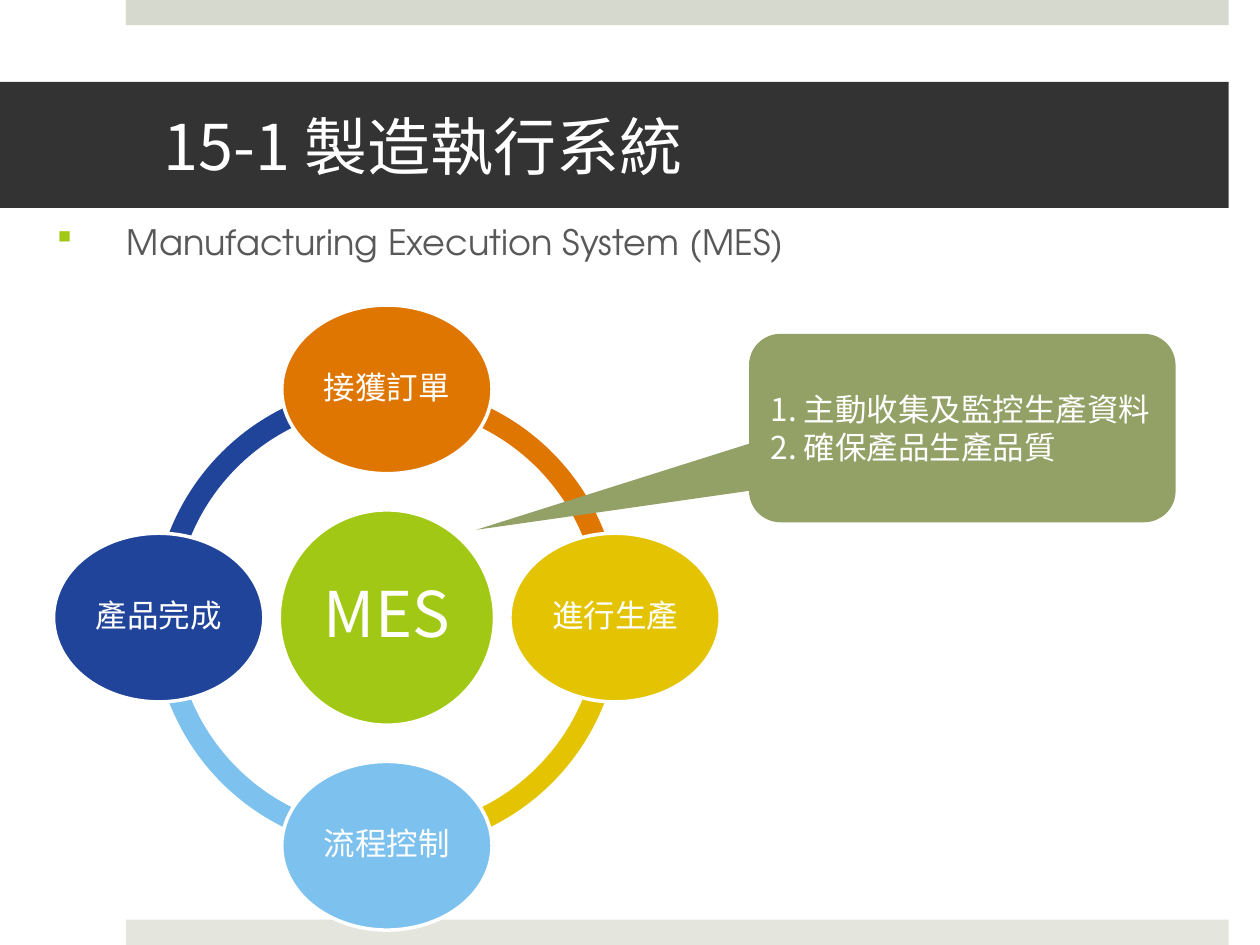
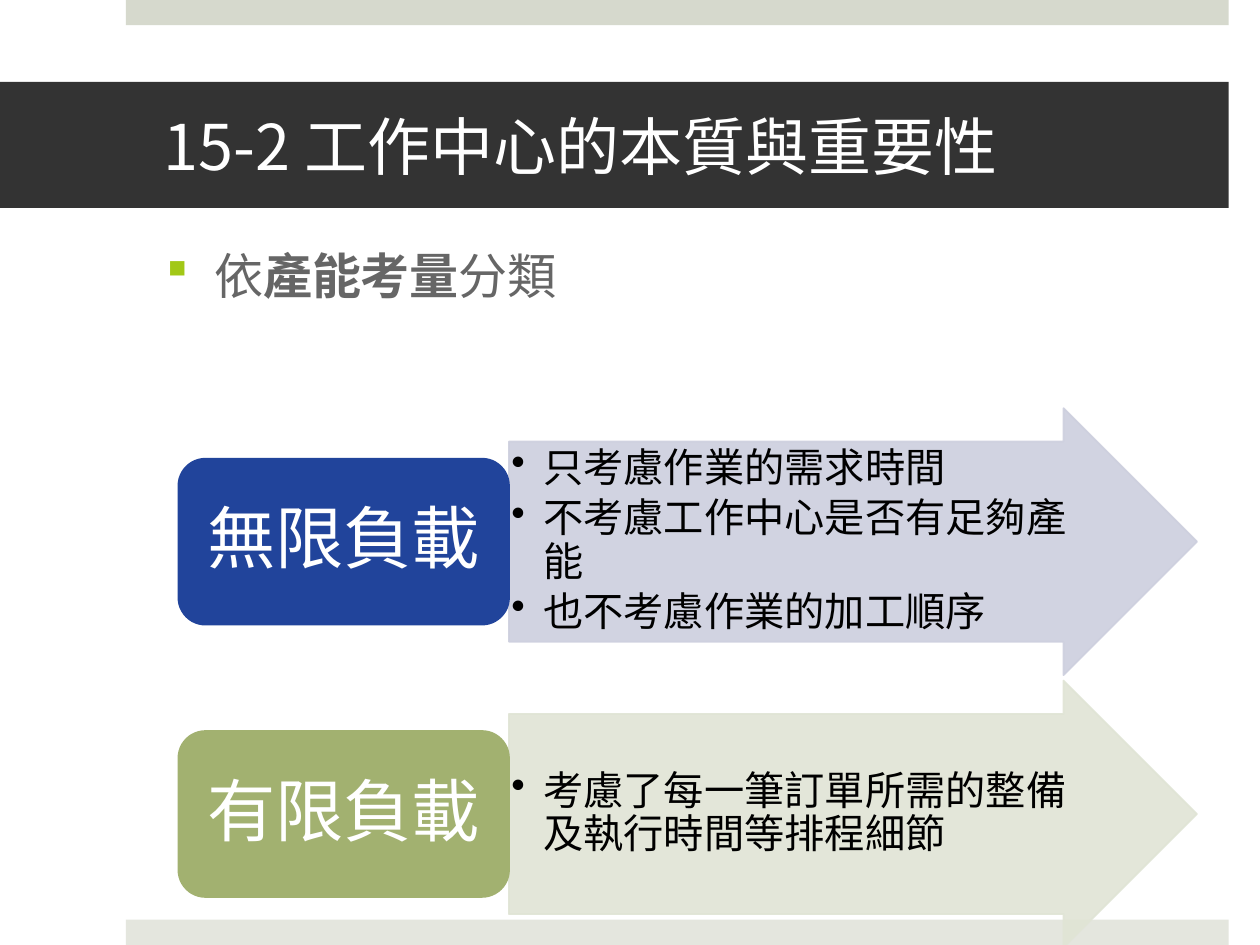
from dataclasses import dataclass
from math import cos, radians, sin

from lxml.etree import SubElement
from pptx import Presentation
from pptx.dml.color import RGBColor
from pptx.enum.shapes import MSO_SHAPE as Shape
from pptx.enum.text import MSO_ANCHOR as Anchor, PP_ALIGN as Align
from pptx.oxml.ns import qn
from pptx.shapes.autoshape import Shape as AutoShape
from pptx.slide import Slide
from pptx.text.text import _Paragraph as Paragraph
from pptx.util import Cm, Pt

WHITE = RGBColor(0xFF, 0xFF, 0xFF)
BLACK = RGBColor(0x00, 0x00, 0x00)
CHARCOAL = RGBColor(0x33, 0x33, 0x33)
DARK_GRAY = RGBColor(0x59, 0x59, 0x59)
GRAY = RGBColor(0x66, 0x66, 0x66)
TOP_BAND = RGBColor(0xD6, 0xD9, 0xCD)
BOTTOM_BAND = RGBColor(0xE4, 0xE6, 0xDE)
LIME = RGBColor(0xA2, 0xC8, 0x16)
ORANGE = RGBColor(0xE0, 0x76, 0x02)
YELLOW = RGBColor(0xE4, 0xC4, 0x02)
SKY = RGBColor(0x7D, 0xC1, 0xEF)
NAVY = RGBColor(0x21, 0x44, 0x9B)
OLIVE = RGBColor(0x93, 0xA1, 0x66)
MOSS = RGBColor(0xA2, 0xB1, 0x70)
PALE_NAVY = RGBColor(0xCD, 0xCF, 0xDE)
PALE_MOSS = RGBColor(0xE0, 0xE4, 0xD5)

CJK_FONT = "Noto Sans CJK SC"
LATIN_FONT = "TeX Gyre Adventor"


@dataclass(frozen=True)
class Area:
    """A rectangle in centimetres."""
    left: float
    top: float
    width: float
    height: float

    def lengths(self) -> tuple[Cm, Cm, Cm, Cm]:
        return Cm(self.left), Cm(self.top), Cm(self.width), Cm(self.height)


@dataclass(frozen=True)
class TextStyle:
    size: float
    color: RGBColor = WHITE
    font: str = CJK_FONT
    align: Align = Align.LEFT
    line_spacing: float = 1.0


@dataclass(frozen=True)
class Station:
    label: str
    color: RGBColor
    angle: int


@dataclass(frozen=True)
class LoadType:
    name: str
    color: RGBColor
    arrow_color: RGBColor
    points: tuple[str, ...]


TITLE_STYLE = TextStyle(36)
STATION_STYLE = TextStyle(18, align=Align.CENTER, line_spacing=0.9)
HUB_STYLE = TextStyle(36, align=Align.CENTER, line_spacing=0.9)
CALLOUT_STYLE = TextStyle(18)
LOAD_STYLE = TextStyle(39, align=Align.CENTER, line_spacing=0.9)
POINT_STYLE = TextStyle(23, BLACK, line_spacing=0.9)

STATIONS = (
    Station("接獲訂單", ORANGE, 270),
    Station("進行生產", YELLOW, 0),
    Station("流程控制", SKY, 90),
    Station("產品完成", NAVY, 180),
)
LOAD_TYPES = (
    LoadType("無限負載", NAVY, PALE_NAVY,
             ("只考慮作業的需求時間", "不考慮工作中心是否有足夠產能", "也不考慮作業的加工順序")),
    LoadType("有限負載", MOSS, PALE_MOSS,
             ("考慮了每一筆訂單所需的整備及執行時間等排程細節",)),
)


def centered(x: float, y: float, width: float, height: float) -> Area:
    return Area(x - width / 2, y - height / 2, width, height)


def add_filled(page: Slide, kind: Shape, area: Area, color: RGBColor) -> AutoShape:
    shape = page.shapes.add_shape(kind, *area.lengths())
    shape.shadow.inherit = False
    shape.fill.solid()
    shape.fill.fore_color.rgb = color
    shape.line.fill.background()
    return shape


def outline(shape: AutoShape, color: RGBColor, width: float) -> None:
    shape.line.color.rgb = color
    shape.line.width = Pt(width)


def set_insets(shape: AutoShape, left: float, top: float, right: float, bottom: float) -> None:
    frame = shape.text_frame
    frame.margin_left, frame.margin_top = Cm(left), Cm(top)
    frame.margin_right, frame.margin_bottom = Cm(right), Cm(bottom)


def style_paragraph(para: Paragraph, style: TextStyle) -> None:
    para.alignment = style.align
    para.line_spacing = style.line_spacing
    for span in para.runs:
        span.font.size = Pt(style.size)
        span.font.color.rgb = style.color
        span.font.name = style.font
        SubElement(span.font._element, qn("a:ea"), typeface=CJK_FONT)


def write(shape: AutoShape, lines: tuple[str, ...], style: TextStyle) -> None:
    frame = shape.text_frame
    frame.word_wrap = True
    frame.vertical_anchor = Anchor.MIDDLE
    frame.text = "\n".join(lines)
    for para in frame.paragraphs:
        style_paragraph(para, style)


def add_bullet(para: Paragraph, symbol: str, indent: float,
               color: RGBColor | None = None, font: str | None = None) -> None:
    """Give the paragraph a bullet with a hanging indent in centimetres."""
    properties = para._p.get_or_add_pPr()
    properties.set("marL", str(Cm(indent)))
    properties.set("indent", str(-Cm(indent)))
    if color is not None:
        bullet_color = SubElement(properties, qn("a:buClr"))
        SubElement(bullet_color, qn("a:srgbClr"), val=str(color))
    if font is not None:
        SubElement(properties, qn("a:buFont"), typeface=font, pitchFamily="2", charset="2")
    SubElement(properties, qn("a:buChar"), char=symbol)


def set_opacity(shape: AutoShape, percent: int) -> None:
    """Apply the opacity to both fill and line."""
    for color in shape._element.spPr.iter(qn("a:srgbClr")):
        SubElement(color, qn("a:alpha"), val=str(percent * 1000))


def add_page(deck: Presentation, title: str) -> Slide:
    page = deck.slides.add_slide(deck.slide_layouts[6])
    add_filled(page, Shape.RECTANGLE, Area(2.54, 0, 22.23, 0.51), TOP_BAND)
    add_filled(page, Shape.RECTANGLE, Area(2.54, 18.54, 22.23, 0.51), BOTTOM_BAND)
    banner = add_filled(page, Shape.RECTANGLE, Area(0, 1.65, 24.77, 2.54), CHARCOAL)
    set_insets(banner, 3.3, 0.13, 0.76, 0.13)
    write(banner, (title,), TITLE_STYLE)
    return page


def add_lead(page: Slide, area: Area, spans: tuple[str, ...],
             style: TextStyle, indent: float) -> Paragraph:
    """Add the square-bulleted line below the title."""
    box = page.shapes.add_textbox(*area.lengths())
    box.text_frame.word_wrap = True
    para = box.text_frame.paragraphs[0]
    for text in spans:
        para.add_run().text = text
    style_paragraph(para, style)
    para.space_before = Pt(20)
    add_bullet(para, "§", indent, LIME, "Wingdings")
    return para


def add_cycle(page: Slide, x: float, y: float) -> None:
    """Draw the ring of stations around the MES hub centred on x, y."""
    orbit = 4.6
    for station in STATIONS:
        arc = add_filled(page, Shape.BLOCK_ARC, centered(x, y, 9.42, 9.42), station.color)
        arc.adjustments[0] = station.angle * 0.6
        arc.adjustments[1] = (station.angle + 90) % 360 * 0.6
        arc.adjustments[2] = 0.046
    hub = add_filled(page, Shape.OVAL, centered(x, y, 4.34, 4.34), LIME)
    outline(hub, WHITE, 2)
    set_insets(hub, 0.13, 0.13, 0.13, 0.13)
    write(hub, ("MES",), HUB_STYLE)
    for station in STATIONS:
        turn = radians(station.angle)
        area = centered(x + orbit * cos(turn), y + orbit * sin(turn), 4.24, 3.4)
        oval = add_filled(page, Shape.OVAL, area, station.color)
        outline(oval, WHITE, 2)
        set_insets(oval, 0.08, 0.08, 0.08, 0.08)
        write(oval, (station.label,), STATION_STYLE)


def add_load_row(page: Slide, load: LoadType, top: float) -> None:
    arrow = add_filled(page, Shape.RIGHT_ARROW, Area(10.26, top, 13.87, 5.38), load.arrow_color)
    outline(arrow, load.arrow_color, 1)
    set_opacity(arrow, 90)
    arrow.adjustments[0] = 0.75
    arrow.adjustments[1] = 0.5
    set_insets(arrow, 0.05, 0.05, 0.05, 0.05)
    write(arrow, load.points, POINT_STYLE)
    for para in arrow.text_frame.paragraphs:
        para.space_after = Pt(4)
        add_bullet(para, "•", 0.64)

    label = add_filled(page, Shape.ROUNDED_RECTANGLE, Area(3.58, top + 1, 6.7, 3.38), load.color)
    set_insets(label, 0.35, 0.2, 0.35, 0.2)
    write(label, (load.name,), LOAD_STYLE)


def build_execution_page(deck: Presentation) -> None:
    page = add_page(deck, "15-1 製造執行系統")
    add_lead(page, Area(0.89, 4.32, 22.86, 12.57), ("Manufacturing Execution System (MES)",),
             TextStyle(20, DARK_GRAY, LATIN_FONT), 1.42)
    add_cycle(page, 7.8, 12.45)
    callout = add_filled(page, Shape.ROUNDED_RECTANGULAR_CALLOUT,
                         Area(15.1, 6.73, 8.6, 3.8), OLIVE)
    callout.adjustments[0] = -1.14
    callout.adjustments[1] = 0.54
    write(callout, ("1. 主動收集及監控生產資料", "2. 確保產品生產品質"), CALLOUT_STYLE)


def build_work_center_page(deck: Presentation) -> None:
    page = add_page(deck, "15-2 工作中心的本質與重要性")
    lead = add_lead(page, Area(3.1, 4.83, 21.13, 12.6), ("依", "產能考量", "分類"),
                    TextStyle(28, GRAY), 0.97)
    lead.runs[1].font.bold = True
    for row, load in enumerate(LOAD_TYPES):
        add_load_row(page, load, 8.23 + row * 5.49)


def main() -> None:
    deck = Presentation()
    deck.slide_width, deck.slide_height = Cm(25.4), Cm(19.05)
    build_execution_page(deck)
    build_work_center_page(deck)
    deck.save("out.pptx")


if __name__ == "__main__":
    main()
